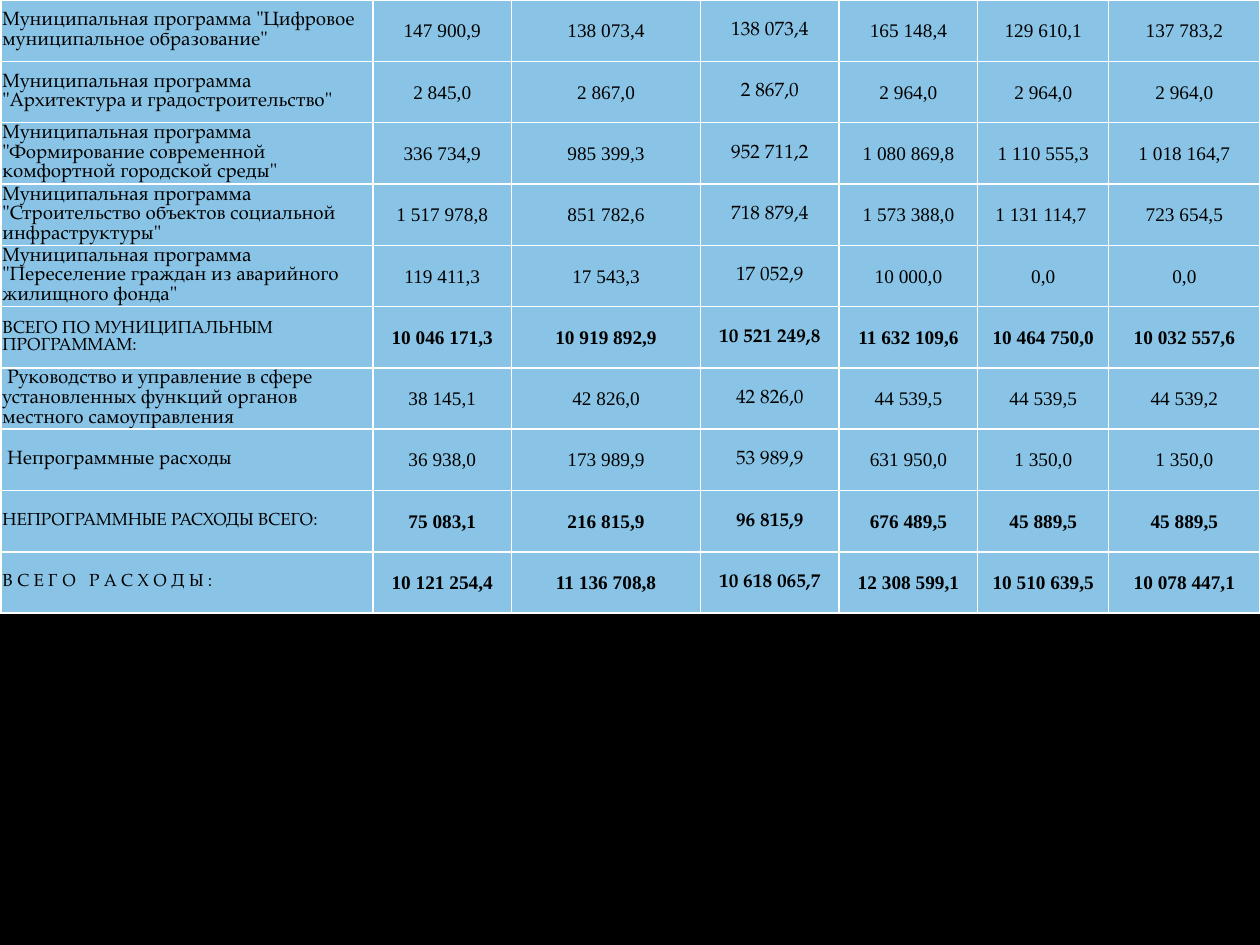
from lxml import etree
from pptx import Presentation
from pptx.dml.color import RGBColor
from pptx.enum import text
from pptx.oxml.ns import qn
from pptx.util import Inches, Pt

BLACK = RGBColor(0, 0, 0)
BLUE = RGBColor(0x89, 0xC3, 0xE5)
WHITE = RGBColor(255, 255, 255)
SERIF = "TeX Gyre Pagella"
ROMAN = "Times New Roman"
COLS = [2.95, 1.1, 1.5, 1.1, 1.1, 1.04, 1.2]
HIGH = 4.87
TOTALS = {5, 8, 9}
ROWS = [
    ['Муниципальная программа "Цифровое муниципальное образование"',
     "147 900,9", "138 073,4", "138 073,4", "165 148,4", "129 610,1", "137 783,2"],
    ['Муниципальная программа "Архитектура и градостроительство"',
     "2 845,0", "2 867,0", "2 867,0", "2 964,0", "2 964,0", "2 964,0"],
    ['Муниципальная программа "Формирование современной комфортной городской среды"',
     "336 734,9", "985 399,3", "952 711,2", "1 080 869,8", "1 110 555,3", "1 018 164,7"],
    ['Муниципальная программа "Строительство объектов социальной инфраструктуры"',
     "1 517 978,8", "851 782,6", "718 879,4", "1 573 388,0", "1 131 114,7 ", "723 654,5"],
    ['Муниципальная программа "Переселение граждан из аварийного жилищного фонда"',
     "119 411,3", "17 543,3", "17 052,9", "10 000,0", "0,0", "0,0"],
    ["ВСЕГО ПО МУНИЦИПАЛЬНЫМ ПРОГРАММАМ:",
     "10 046 171,3", "10 919 892,9", "10 521 249,8", "11 632 109,6", "10 464 750,0", "10 032 557,6"],
    [" Руководство и управление в сфере установленных функций органов местного самоуправления",
     "38 145,1", "42 826,0", "42 826,0", "44 539,5", "44 539,5", "44 539,2"],
    [" Непрограммные расходы",
     "36 938,0", "173 989,9", "53 989,9", "631 950,0", "1 350,0", "1 350,0"],
    ["НЕПРОГРАММНЫЕ РАСХОДЫ ВСЕГО:",
     "75 083,1", "216 815,9", "96 815,9", "676 489,5", "45 889,5", "45 889,5"],
    ["В С Е Г О   Р А С Х О Д Ы :",
     "10 121 254,4", "11 136 708,8", "10 618 065,7", "12 308 599,1", "10 510 639,5", "10 078 447,1"],
]


def add_edges(cell):
    props = cell._tc.get_or_add_tcPr()
    for spot, side in enumerate(("a:lnL", "a:lnR", "a:lnT", "a:lnB")):
        line = etree.Element(qn(side), w=str(Pt(1)))
        fill = etree.SubElement(line, qn("a:solidFill"))
        etree.SubElement(fill, qn("a:srgbClr"), val=str(WHITE))
        props.insert(spot, line)


def fill_cell(cell, words, label, serif, total):
    cell.fill.solid()
    cell.fill.fore_color.rgb = BLUE
    cell.margin_left = cell.margin_right = cell.margin_top = Inches(0.01)
    cell.margin_bottom = 0
    cell.vertical_anchor = text.MSO_ANCHOR.MIDDLE
    add_edges(cell)
    cell.text_frame.text = words
    para = cell.text_frame.paragraphs[0]
    para.alignment = text.PP_ALIGN.LEFT if label else text.PP_ALIGN.CENTER
    font = para.runs[0].font
    font.name = SERIF if serif else ROMAN
    font.size = Pt(10 if label and total else 11)
    font.bold = total and not label
    font.color.rgb = BLACK


def add_budget(slide):
    frame = slide.shapes.add_table(len(ROWS), len(COLS), Inches(0.01), 0,
                                   Inches(sum(COLS)), Inches(HIGH))
    table = frame.table
    table.first_row = table.horz_banding = False
    for col, wide in zip(table.columns, COLS):
        col.width = Inches(wide)
    for r, row in enumerate(ROWS):
        table.rows[r].height = Inches(HIGH / len(ROWS))
        for c, words in enumerate(row):
            fill_cell(table.cell(r, c), words, c == 0, c in (0, 3), r in TOTALS)


def main():
    deck = Presentation()
    deck.slide_width = Inches(10)
    deck.slide_height = Inches(7.5)
    slide = deck.slides.add_slide(deck.slide_layouts[6])
    back = slide.background.fill
    back.solid()
    back.fore_color.rgb = BLACK
    add_budget(slide)
    deck.save("out.pptx")


if __name__ == "__main__":
    main()
